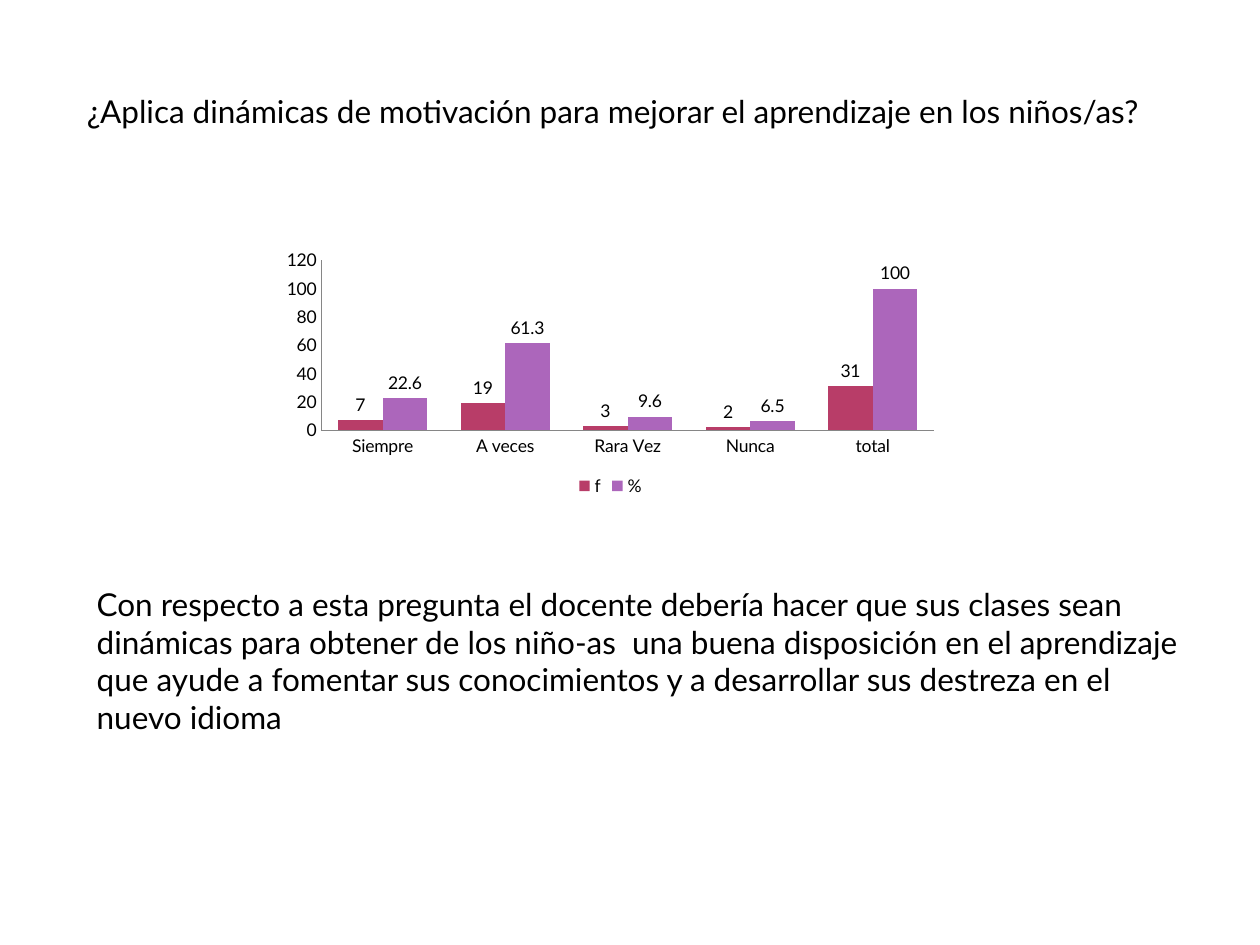
from pptx import Presentation
from pptx.chart.data import CategoryChartData
from pptx.dml.color import RGBColor
from pptx.enum.chart import XL_CHART_TYPE, XL_LABEL_POSITION, XL_LEGEND_POSITION, XL_TICK_MARK
from pptx.enum.text import MSO_ANCHOR, PP_ALIGN
from pptx.util import Cm, Pt

CLUSTERED = XL_CHART_TYPE.COLUMN_CLUSTERED
OUTSIDE_END = XL_LABEL_POSITION.OUTSIDE_END
LEGEND_BOTTOM = XL_LEGEND_POSITION.BOTTOM
NO_TICK = XL_TICK_MARK.NONE
TOP = MSO_ANCHOR.TOP
LEFT = PP_ALIGN.LEFT

COLORS = {"text": "000000", "axis": "868686", "f": "B83D68", "%": "AC66BB"}
FONT = "Lato"
TITLE_ONLY = 5

QUESTION = "¿Aplica dinámicas de motivación para mejorar el aprendizaje en los niños/as?"
COMMENTARY = (
    "Con respecto a esta pregunta el docente debería hacer que sus clases sean "
    "dinámicas para obtener de los niño-as  una buena disposición en el aprendizaje "
    "que ayude a fomentar sus conocimientos y a desarrollar sus destreza en el "
    "nuevo idioma"
)
ANSWERS = ["Siempre", "A veces", "Rara Vez", "Nunca", "total"]
RESULTS = {"f": [7, 19, 3, 2, 31], "%": [22.6, 61.3, 9.6, 6.5, 100]}


class SlideBuilder:
    def __init__(self, slide):
        self.slide = slide

    def color(self, key):
        return RGBColor.from_string(COLORS[key])

    def style_font(self, font, size):
        font.name = FONT
        font.size = Pt(size)
        font.bold = False
        font.color.rgb = self.color("text")

    def fill_text(self, frame, text):
        frame.text = text
        frame.word_wrap = True
        frame.vertical_anchor = TOP
        frame.margin_left = frame.margin_right = Cm(0.25)
        frame.margin_top = frame.margin_bottom = Cm(0.13)
        paragraph = frame.paragraphs[0]
        paragraph.alignment = LEFT
        paragraph.line_spacing = 1.0
        paragraph.space_before = Pt(0)
        self.style_font(paragraph.runs[0].font, 18)

    def title(self, text, left, top, width, height):
        heading = self.slide.shapes.title
        heading.left, heading.top = Cm(left), Cm(top)
        heading.width, heading.height = Cm(width), Cm(height)
        self.fill_text(heading.text_frame, text)

    def text(self, text, left, top, width, height):
        body = self.slide.shapes.add_textbox(Cm(left), Cm(top), Cm(width), Cm(height))
        self.fill_text(body.text_frame, text)

    def column_chart(self, categories, results, left, top, width, height):
        data = CategoryChartData()
        data.categories = categories
        for name, values in results.items():
            data.add_series(name, values)
        chart = self.slide.shapes.add_chart(
            CLUSTERED, Cm(left), Cm(top), Cm(width), Cm(height), data
        ).chart
        self.style_font(chart.font, 10)
        chart.has_title = False
        chart.has_legend = True
        chart.legend.position = LEGEND_BOTTOM
        chart.legend.include_in_layout = False
        for axis in (chart.category_axis, chart.value_axis):
            axis.has_major_gridlines = False
            axis.major_tick_mark = axis.minor_tick_mark = NO_TICK
            axis.format.line.color.rgb = self.color("axis")
            axis.format.line.width = Pt(0.75)
        chart.value_axis.minimum_scale = 0
        chart.value_axis.maximum_scale = 120
        chart.value_axis.major_unit = 20
        plot = chart.plots[0]
        plot.gap_width = 75
        plot.overlap = 0
        plot.vary_by_categories = False
        for series in plot.series:
            series.format.fill.solid()
            series.format.fill.fore_color.rgb = self.color(series.name)
            series.data_labels.show_value = True
            series.data_labels.position = OUTSIDE_END


def main():
    presentation = Presentation()
    presentation.slide_width, presentation.slide_height = Cm(25.4), Cm(19.05)
    layout = presentation.slide_layouts[TITLE_ONLY]
    builder = SlideBuilder(presentation.slides.add_slide(layout))
    builder.title(QUESTION, 1.5, 1.73, 22, 2.57)
    builder.text(COMMENTARY, 1.7, 11.66, 22.4, 3.33)
    builder.column_chart(ANSWERS, RESULTS, 5.51, 4.93, 13.59, 5.18)
    presentation.save("out.pptx")


if __name__ == "__main__":
    main()
